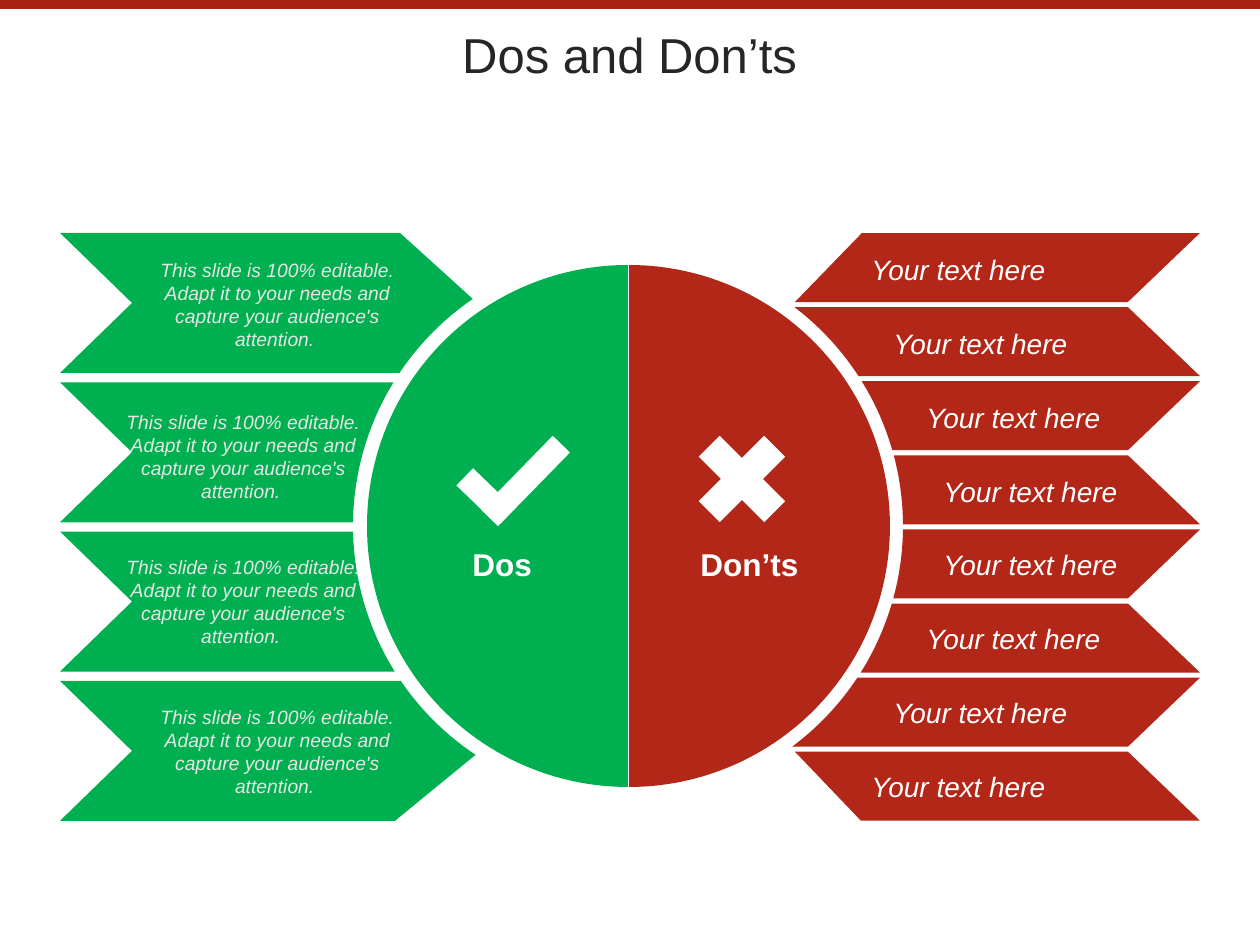
from math import cos, pi, sin, sqrt

from pptx import Presentation
from pptx.dml.color import RGBColor
from pptx.enum.shapes import MSO_SHAPE
from pptx.enum.text import MSO_ANCHOR, PP_ALIGN
from pptx.util import Emu, Pt

SCALE = 914400 / 126  # EMU in one px

GREEN = RGBColor(0x00, 0xB0, 0x50)
RED = RGBColor(0xB2, 0x27, 0x17)
BAR = RGBColor(0xA7, 0x22, 0x13)
WHITE = RGBColor(0xFF, 0xFF, 0xFF)
PALE = RGBColor(0xE7, 0xE6, 0xE6)
DARK = RGBColor(0x26, 0x26, 0x26)

MID_X, MID_Y = 628, 526
DISC, RING = 261, 275  # radius of the disc and of the gap around it
TOP = 233

DO_TEXT = ("This slide is 100% editable. Adapt it to your needs and "
           "capture your audience's attention. ")
DONT_TEXT = "Your text here"


def px(num):
    return Emu(round(num * SCALE))


def paint(shape, color):
    shape.shadow.inherit = False
    shape.fill.solid()
    shape.fill.fore_color.rgb = color
    shape.line.fill.background()


def style(frame, size, color, align, bold=False, italic=False):
    for par in frame.paragraphs:
        par.alignment = align
        for run in par.runs:
            font = run.font
            font.name, font.size = "Arial", Pt(size)
            font.bold, font.italic = bold, italic
            font.color.rgb = color


def add_text(slide, box, text, size, color, align=PP_ALIGN.CENTER,
             anchor=MSO_ANCHOR.MIDDLE, **look):
    frame = slide.shapes.add_textbox(*map(px, box)).text_frame
    frame.word_wrap = True
    frame.vertical_anchor = anchor
    frame.text = text
    style(frame, size, color, align, **look)


def add_form(slide, points, color):
    start, *rest = [(px(x), px(y)) for x, y in points]
    form = slide.shapes.build_freeform(*start, scale=1.0)
    form.add_line_segments(rest, close=True)
    paint(form.convert_to_shape(), color)


def add_block(slide, kind, box, color, turn=0):
    shape = slide.shapes.add_shape(kind, *map(px, box))
    shape.rotation = turn
    paint(shape, color)


def ring_edge(side, top, low, steps=16):
    """Points down the ring from top to low; side is -1 left, 1 right."""
    rows = [top + (low - top) * i / steps for i in range(steps + 1)]
    return [(MID_X + side * sqrt(RING ** 2 - (y - MID_Y) ** 2), y)
            for y in rows]


def add_title(slide, text):
    title = slide.shapes.title
    title.left, title.top, title.width, title.height = map(
        px, (62, 10, 1135, 95))
    frame = title.text_frame
    frame.text = text
    frame.vertical_anchor = MSO_ANCHOR.MIDDLE
    frame.paragraphs[0].line_spacing = 0.9
    style(frame, 28, DARK, PP_ALIGN.CENTER)


def add_dos(slide):
    tall, step, tail, notch = 140, 149.3, 60, 132
    tops = [TOP + step * i for i in range(4)]
    first, last = tops[0], tops[-1]
    # The outer ribbons end in a point, the inner ones follow the ring
    edges = [
        [(400, first)] + ring_edge(-1, first + 66, first + tall),
        ring_edge(-1, tops[1], tops[1] + tall),
        ring_edge(-1, tops[2], tops[2] + tall),
        ring_edge(-1, last, last + 74) + [(395, last + tall)],
    ]
    for top, edge in zip(tops, edges):
        back = [(tail, top + tall), (notch, top + tall / 2), (tail, top)]
        add_form(slide, edge + back, GREEN)
    for left, top, width in ((127, 251, 301), (111, 403, 265),
                             (111, 548, 265), (132, 698, 291)):
        add_text(slide, (left, top, width, 107), DO_TEXT, 11, PALE,
                 italic=True)


def add_donts(slide):
    tall, step, tail, notch = 69, 74.1, 1200, 1128
    lefts = [859, 881, 914, 931]
    for i, left in enumerate(lefts + lefts[::-1]):
        top = TOP + step * i
        low = top + tall
        if i == 0:
            edge = [(862, top), (795, low)]
        elif i == 7:
            edge = [(795, top), (861, low)]
        else:
            edge = ring_edge(1, top, low)
        # Tails pair up into notches
        ends = (notch, tail) if i % 2 else (tail, notch)
        add_form(slide, edge + [(ends[1], low), (ends[0], top)], RED)
        add_text(slide, (left, 246 + 73.8 * i, 205, 47), DONT_TEXT, 16,
                 WHITE, PP_ALIGN.LEFT, italic=True)


def add_half(slide, side, mid, color, steps=90):
    turns = [pi * i / steps for i in range(steps + 1)]
    add_form(slide, [(mid + side * DISC * sin(t), MID_Y - DISC * cos(t))
                     for t in turns], color)


def add_disc(slide):
    add_half(slide, -1, MID_X, GREEN)
    add_half(slide, 1, MID_X + 1, RED)
    for text, left, width in (("Dos ", 402, 209), ("Don’ts", 622, 255)):
        add_text(slide, (left, 539, width, 50), text, 18, WHITE,
                 anchor=MSO_ANCHOR.TOP, bold=True)
    # Cross and tick
    add_block(slide, MSO_SHAPE.MATH_MULTIPLY, (679, 416, 126, 126), WHITE)
    add_block(slide, MSO_SHAPE.RECTANGLE, (474, 469, 103, 24), WHITE, 314.3)
    add_block(slide, MSO_SHAPE.RECTANGLE, (457, 484, 55, 24), WHITE, 44)


def main():
    deck = Presentation()
    deck.slide_width, deck.slide_height = px(1260), px(945)
    slide = deck.slides.add_slide(deck.slide_layouts[5])
    add_title(slide, "Dos and Don’ts")
    add_block(slide, MSO_SHAPE.RECTANGLE, (0, 0, 1260, 9), BAR)
    add_dos(slide)
    add_donts(slide)
    add_disc(slide)
    deck.save("out.pptx")


if __name__ == "__main__":
    main()
